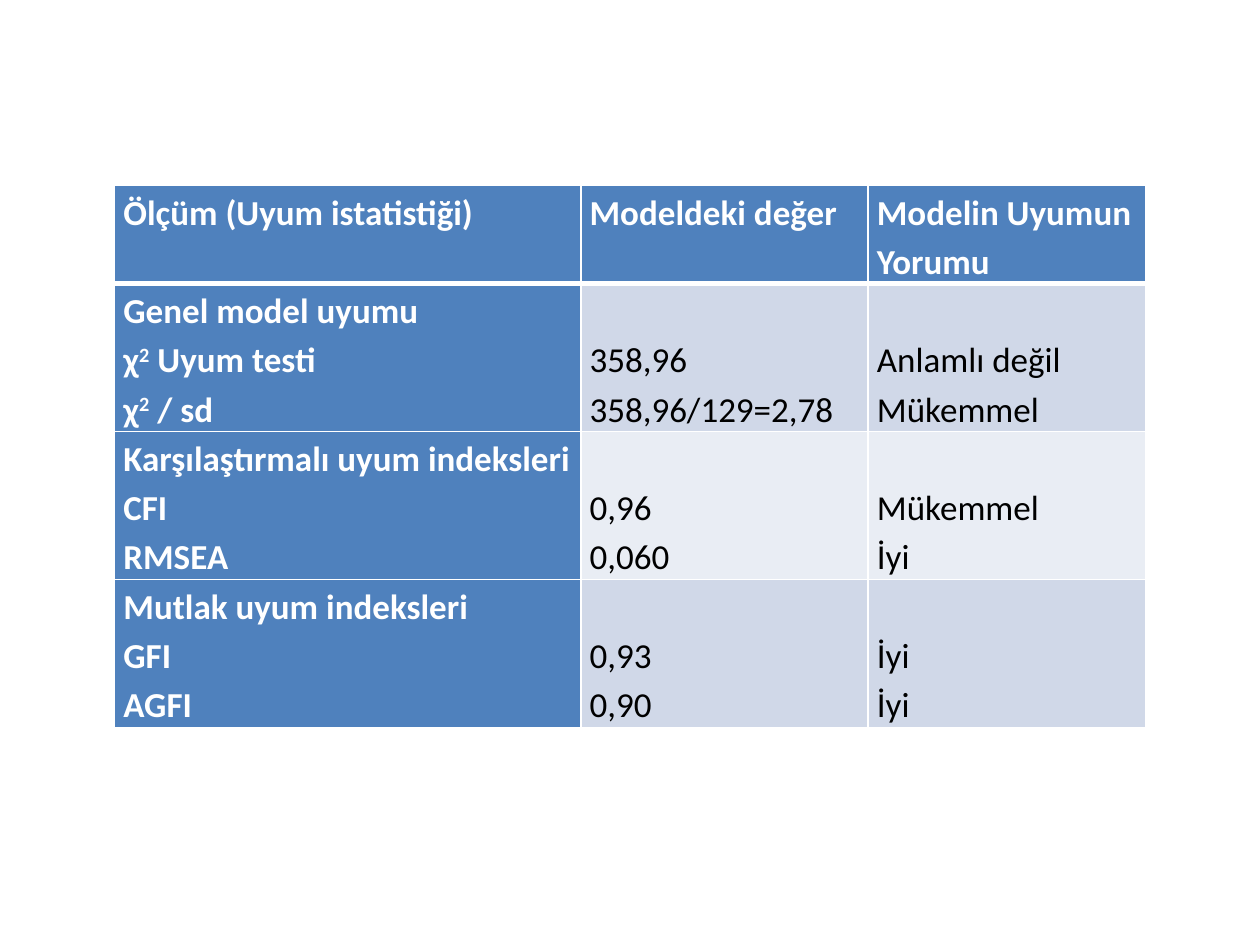
from pptx import Presentation
from pptx.dml.color import RGBColor
from pptx.enum.text import MSO_ANCHOR
from pptx.oxml.ns import qn
from pptx.util import Inches, Pt
from lxml import etree

TOP, BOTTOM = MSO_ANCHOR.TOP, MSO_ANCHOR.BOTTOM
WHITE, BLACK, BLUE = "FFFFFF", "000000", "4F81BD"
BANDS = ("D0D8E8", "E9EDF4")
COLS = (3.7, 2.28, 2.2)
HEAD, BODY = 0.78, 1.17
ROWS = [
    ("Ölçüm (Uyum istatistiği)", "Modeldeki değer", "Modelin Uyumun Yorumu"),
    ("Genel model uyumu\nχ^2^ Uyum testi\nχ^2^ / sd",
     "358,96\n358,96/129=2,78", "Anlamlı değil\nMükemmel"),
    ("Karşılaştırmalı uyum indeksleri\nCFI\nRMSEA",
     "0,96\n0,060", "Mükemmel\nİyi"),
    ("Mutlak uyum indeksleri\nGFI\nAGFI", "0,93\n0,90", "İyi\nİyi"),
]


def paint(color, value):
    color.rgb = RGBColor.from_string(value)


def write(frame, text, size=20, color=BLACK, bold=False):
    """Write one paragraph per line; text between carets is superscript."""
    for i, line in enumerate(text.split("\n")):
        para = frame.add_paragraph() if i else frame.paragraphs[0]
        para.line_spacing = 1.15
        for j, part in enumerate(line.split("^")):
            run = para.add_run()
            run.text = part
            font = run.font
            font.name, font.size, font.bold = "Calibri", Pt(size), bold
            paint(font.color, color)
            if j % 2:
                run._r.get_or_add_rPr().set("baseline", "30000")


def edge(cell, side, width):
    line = etree.SubElement(cell._tc.get_or_add_tcPr(), qn("a:ln" + side),
                            w=str(Pt(width)))
    fill = etree.SubElement(line, qn("a:solidFill"))
    etree.SubElement(fill, qn("a:srgbClr"), val=WHITE)


def style(cell, fill, top, base, anchor):
    cell.margin_left = cell.margin_right = Inches(0.07)
    cell.margin_top = cell.margin_bottom = 0
    cell.vertical_anchor = anchor
    for side, width in zip("LRTB", (1, 1, top, base)):
        edge(cell, side, width)
    cell.fill.solid()
    paint(cell.fill.fore_color, fill)


def grid(slide):
    high = HEAD + BODY * (len(ROWS) - 1)
    table = slide.shapes.add_table(
        len(ROWS), len(COLS), Inches(0.91), Inches(1.47),
        Inches(sum(COLS)), Inches(high)).table
    for col, width in zip(table.columns, COLS):
        col.width = Inches(width)
    for r, texts in enumerate(ROWS):
        table.rows[r].height = Inches(BODY if r else HEAD)
        for c, text in enumerate(texts):
            cell = table.cell(r, c)
            label = r == 0 or c == 0
            style(cell, BLUE if label else BANDS[(r - 1) % 2],
                  top=3 if r == 1 else 1, base=1 if r else 3,
                  anchor=TOP if label else BOTTOM)
            write(cell.text_frame, text, bold=label,
                  color=WHITE if label else BLACK)


def main():
    deck = Presentation()
    deck.slide_width, deck.slide_height = Inches(10), Inches(7.5)
    grid(deck.slides.add_slide(deck.slide_layouts[6]))
    deck.save("out.pptx")


if __name__ == "__main__":
    main()
